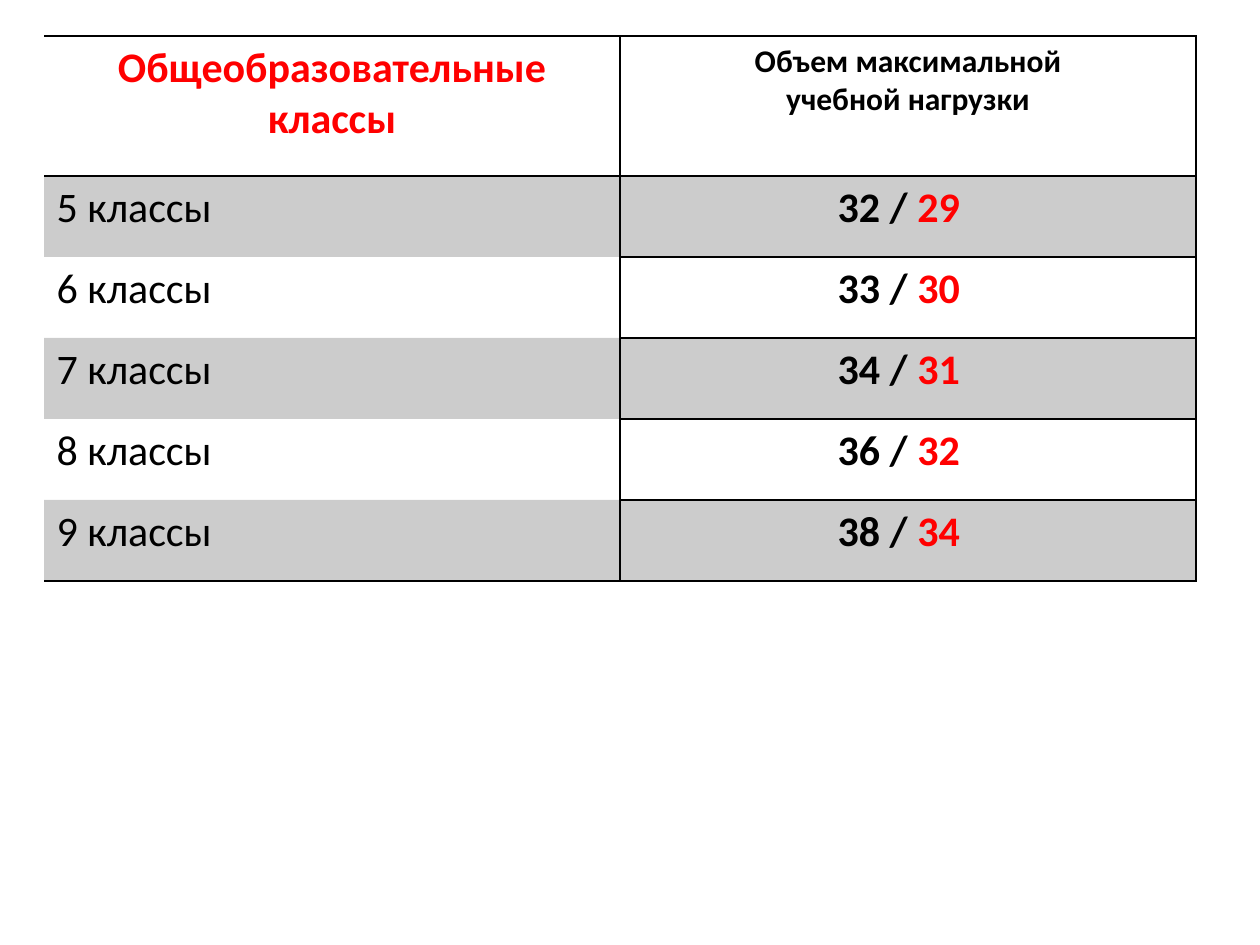
from lxml import etree
from pptx import Presentation
from pptx.dml.color import RGBColor
from pptx.enum.text import PP_ALIGN
from pptx.oxml.ns import qn
from pptx.util import Pt

LEFT, CENTER = PP_ALIGN.LEFT, PP_ALIGN.CENTER
BLACK = RGBColor(0, 0, 0)
RED = RGBColor(255, 0, 0)

PX = 914400 / 126
SLIDE_WIDTH, SLIDE_HEIGHT = 1260, 945
TABLE_LEFT, TABLE_TOP = 44, 36
COLUMN_WIDTH, HEADER_HEIGHT, ROW_HEIGHT = 576, 140, 81
LOAD_MARGIN_RIGHT = 31
BAND_OPACITY = 20
PLAIN_STYLE = "{2D5ABB26-0587-4C30-8999-92F81FD0307C}"

CLASS_HEADER = "Общеобразовательные классы"
LOAD_HEADER = ["Объем максимальной", "учебной нагрузки"]
LOADS = [
    ("5 классы", 32, 29),
    ("6 классы", 33, 30),
    ("7 классы", 34, 31),
    ("8 классы", 36, 32),
    ("9 классы", 38, 34),
]


def emu(px):
    return round(px * PX)


def write(cell, paragraphs, align, size, bold):
    """Fill a cell with paragraphs, each a list of (text, colour) runs."""
    frame = cell.text_frame
    for index, runs in enumerate(paragraphs):
        para = frame.paragraphs[0] if index == 0 else frame.add_paragraph()
        para.alignment = align
        for text, color in runs:
            span = para.add_run()
            span.text = text
            font = {"name": "Calibri", "size": Pt(size), "bold": bold}
            for name, value in font.items():
                setattr(span.font, name, value)
            span.font.color.rgb = color


def add_borders(cell, sides):
    properties = cell._tc.get_or_add_tcPr()
    for side in sides:
        line = etree.SubElement(properties, qn(f"a:ln{side}"), w=str(Pt(1)))
        fill = etree.SubElement(line, qn("a:solidFill"))
        etree.SubElement(fill, qn("a:srgbClr"), val=str(BLACK))


def shade(cell, banded):
    if not banded:
        cell.fill.background()
        return
    cell.fill.solid()
    cell.fill.fore_color.rgb = BLACK
    color = cell._tc.tcPr.find(f"{qn('a:solidFill')}/{qn('a:srgbClr')}")
    etree.SubElement(color, qn("a:alpha"), val=str(BAND_OPACITY * 1000))


def main():
    deck = Presentation()
    deck.slide_width, deck.slide_height = emu(SLIDE_WIDTH), emu(SLIDE_HEIGHT)
    page = deck.slides.add_slide(deck.slide_layouts[6])

    row_heights = [HEADER_HEIGHT] + [ROW_HEIGHT] * len(LOADS)
    frame = page.shapes.add_table(
        len(row_heights), 2, emu(TABLE_LEFT), emu(TABLE_TOP),
        emu(2 * COLUMN_WIDTH), emu(sum(row_heights)))
    table = frame.table
    table.first_row = table.horz_banding = False
    table._tbl.tblPr.find(qn("a:tableStyleId")).text = PLAIN_STYLE
    for column in table.columns:
        column.width = emu(COLUMN_WIDTH)
    for row, height in zip(table.rows, row_heights):
        row.height = emu(height)

    write(table.cell(0, 0), [[(CLASS_HEADER, RED)]], CENTER, 24, True)
    write(table.cell(0, 1), [[(line, BLACK)] for line in LOAD_HEADER],
          CENTER, 18, True)
    for index, (classes, maximum, reduced) in enumerate(LOADS, start=1):
        class_cell, load_cell = table.cell(index, 0), table.cell(index, 1)
        write(class_cell, [[(classes, BLACK)]], LEFT, 24, False)
        write(load_cell, [[(f"{maximum} / ", BLACK), (str(reduced), RED)]],
              CENTER, 24, True)
        load_cell.margin_right = emu(LOAD_MARGIN_RIGHT)

    last = len(LOADS)
    for index in range(last + 1):
        class_sides = {0: "RTB", last: "RB"}.get(index, "R")
        for column, sides in enumerate((class_sides, "LRTB")):
            cell = table.cell(index, column)
            add_borders(cell, sides)
            shade(cell, index % 2 == 1)

    deck.save("out.pptx")


if __name__ == "__main__":
    main()
